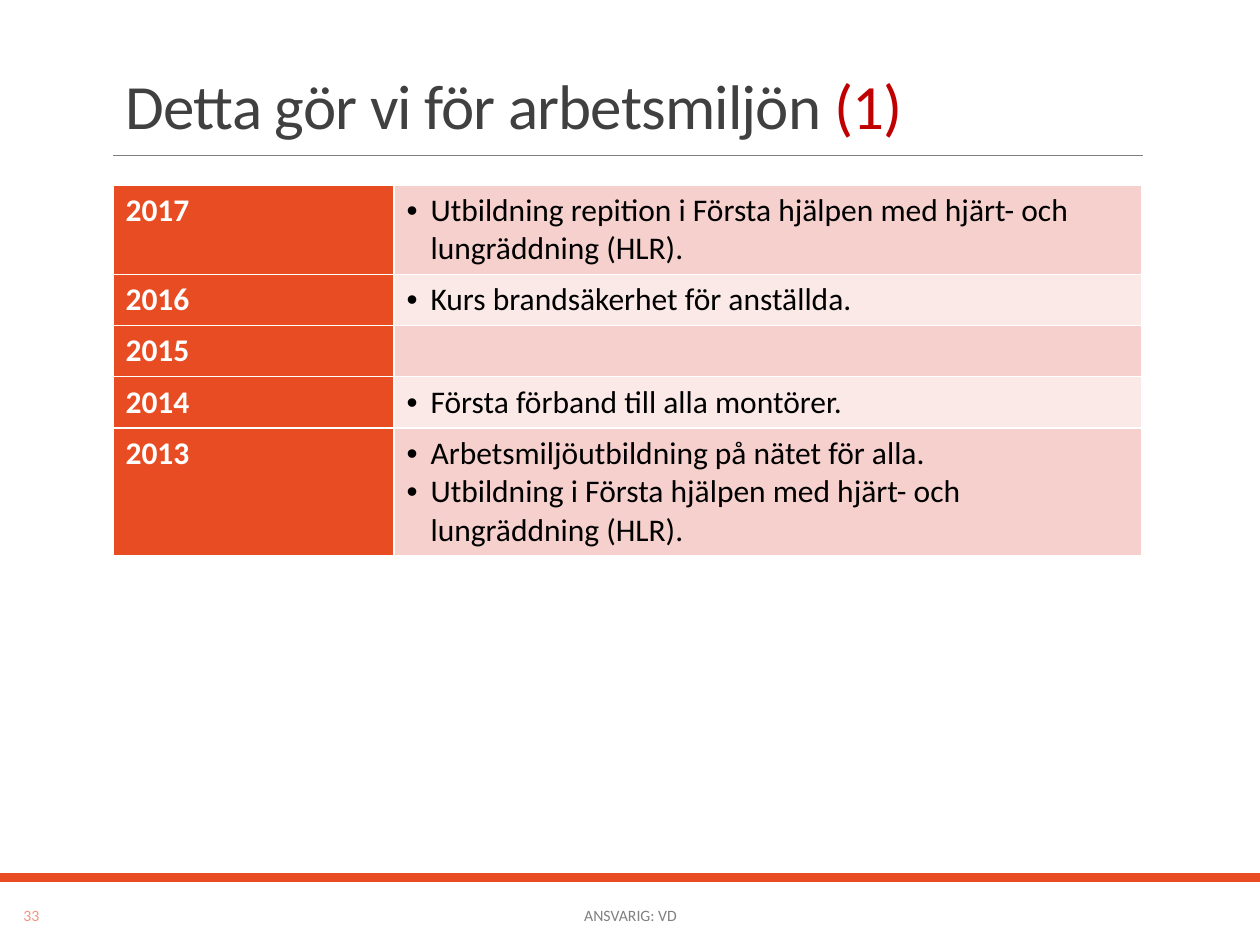
from typing import NamedTuple

from lxml.etree import SubElement
from pptx import Presentation
from pptx.dml.color import RGBColor as RGB
from pptx.enum.shapes import MSO_CONNECTOR as LINE, MSO_SHAPE as SHAPE
from pptx.enum.text import MSO_ANCHOR as ANCHOR, MSO_AUTO_SIZE as FIT, PP_ALIGN as ALIGN
from pptx.oxml import parse_xml
from pptx.oxml.ns import nsdecls, qn
from pptx.util import Emu, Pt

SCALE = 914400 / 126  # EMU in one px
HUES = {
    "accent": "E84C22", "dark": "404040", "grey": "808080", "red": "C00000",
    "pale": "F1947A", "odd": "F6D0CD", "even": "FBE9E8",
    "white": "FFFFFF", "black": "000000",
}


class Year(NamedTuple):
    name: str
    acts: list[str]


class Note(NamedTuple):
    text: str
    left: int
    width: int
    hue: str


YEARS = [
    Year("2017", ["Utbildning repition i Första hjälpen med hjärt- och lungräddning (HLR)."]),
    Year("2016", ["Kurs brandsäkerhet för anställda."]),
    Year("2015", []),
    Year("2014", ["Första förband till alla montörer."]),
    Year("2013", ["Arbetsmiljöutbildning på nätet för alla.",
                  "Utbildning i Första hjälpen med hjärt- och lungräddning (HLR)."]),
]
NOTES = [Note("33", 5, 53, "pale"), Note("ANSVARIG: VD", 381, 499, "grey")]


def px(num: int) -> Emu:
    return Emu(round(num * SCALE))


def box(*nums: int) -> list[Emu]:
    return [px(num) for num in nums]


def hue(name: str) -> RGB:
    return RGB.from_string(HUES[name])


def write(para, text: str, size: int, tint: str, bold: bool = False):
    run = para.add_run()
    run.text = text
    form = {"name": "Calibri", "size": Pt(size), "bold": bold}
    for key, value in form.items():
        setattr(run.font, key, value)
    run.font.color.rgb = hue(tint)
    return run


def add_title(slide) -> None:
    title = slide.shapes.title
    title.left, title.top, title.width, title.height = box(113, 39, 1040, 110)
    frame = title.text_frame
    frame.word_wrap, frame.auto_size = True, FIT.NONE
    frame.vertical_anchor = ANCHOR.BOTTOM
    para = frame.paragraphs[0]
    para.alignment, para.line_spacing = ALIGN.LEFT, 0.85
    for text, tint in (("Detta gör vi för arbetsmiljön ", "dark"), ("(1)", "red")):
        run = write(para, text, 36, tint)
        run.font._element.set("spc", "-50")


def add_rules(slide) -> None:
    """Draw the line below the title and the bar above the footer."""
    bar = slide.shapes.add_shape(SHAPE.RECTANGLE, *box(0, 873, 1260, 9))
    bar.shadow.inherit = False
    bar.fill.solid()
    bar.fill.fore_color.rgb = hue("accent")
    bar.line.fill.background()
    line = slide.shapes.add_connector(LINE.STRAIGHT, *box(113, 155, 1143, 155))
    line.line.color.rgb = hue("grey")
    line.line.width = Pt(0.5)
    SubElement(line._element.spPr, qn("a:effectLst"))


def add_note(slide, note: Note) -> None:
    frame = slide.shapes.add_textbox(*box(note.left, 890, note.width, 50)).text_frame
    frame.word_wrap = True
    frame.vertical_anchor = ANCHOR.MIDDLE
    para = frame.paragraphs[0]
    para.alignment = ALIGN.CENTER
    write(para, note.text, 9, note.hue)


def paint(cell, tint: str) -> None:
    """Fill a cell and give it white borders."""
    cell.fill.solid()
    cell.fill.fore_color.rgb = hue(tint)
    props = cell._tc.get_or_add_tcPr()
    for spot, side in enumerate("LRTB"):
        props.insert(spot, parse_xml(
            f'<a:ln{side} {nsdecls("a")} w="12700"><a:solidFill>'
            f'<a:srgbClr val="{HUES["white"]}"/></a:solidFill></a:ln{side}>'))


def add_bullet(para) -> None:
    props = para._p.get_or_add_pPr()
    props.set("marL", str(px(24)))
    props.set("indent", str(-px(24)))
    SubElement(props, qn("a:buFont"), typeface="Arial")
    SubElement(props, qn("a:buChar"), char="•")


def add_years(slide) -> None:
    shape = slide.shapes.add_table(len(YEARS), 2, *box(113, 185, 1029, 368))
    table = shape.table
    table.first_row = table.horz_banding = False
    for col, width in zip(table.columns, (281, 748)):
        col.width = px(width)
    for num, year in enumerate(YEARS):
        table.rows[num].height = px(51)
        head, body = table.rows[num].cells
        paint(head, "accent")
        paint(body, "even" if num % 2 else "odd")
        write(head.text_frame.paragraphs[0], year.name, 18, "white", True)
        frame = body.text_frame
        for spot, act in enumerate(year.acts):
            para = frame.add_paragraph() if spot else frame.paragraphs[0]
            add_bullet(para)
            write(para, act, 18, "black")
    shape.height = px(368)


def main() -> None:
    deck = Presentation()
    deck.slide_width, deck.slide_height = box(1260, 945)
    slide = deck.slides.add_slide(deck.slide_layouts[5])
    add_rules(slide)
    add_title(slide)
    add_years(slide)
    for note in NOTES:
        add_note(slide, note)
    deck.save("out.pptx")


if __name__ == "__main__":
    main()
